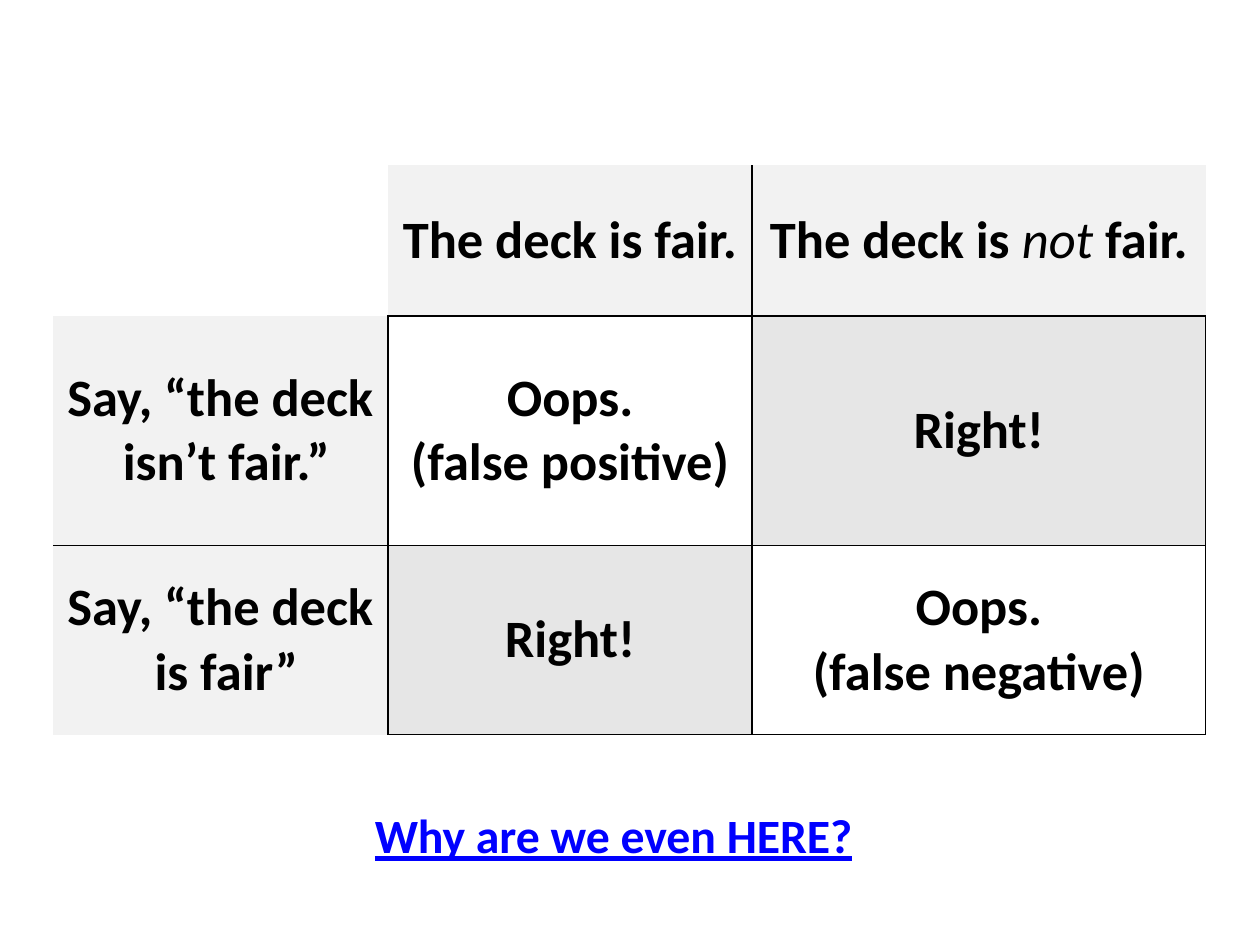
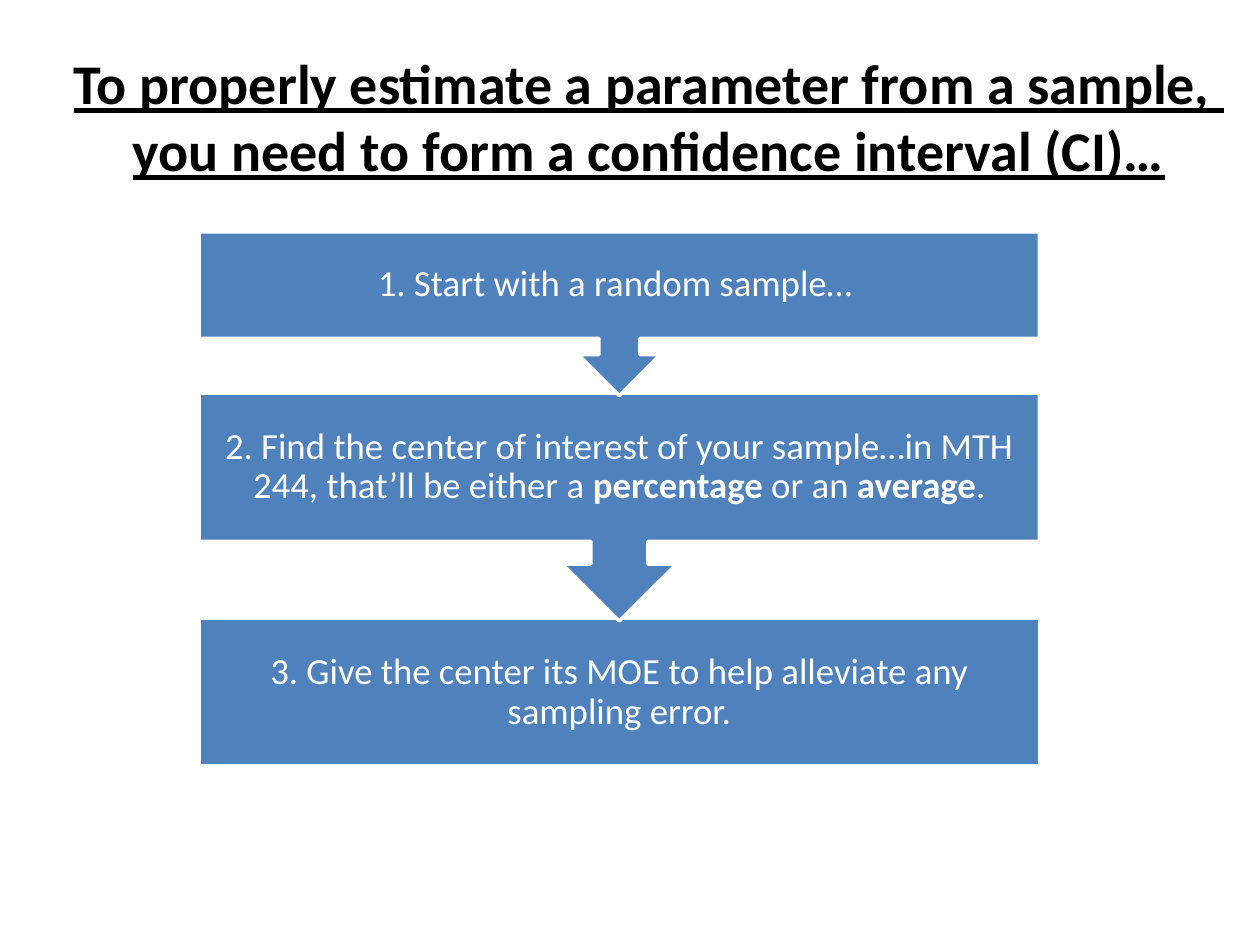
from pptx import Presentation
from pptx.dml.color import RGBColor
from pptx.enum.shapes import MSO_SHAPE as Shape
from pptx.enum.text import MSO_ANCHOR as Anchor, PP_ALIGN as Align
from pptx.oxml import parse_xml
from pptx.oxml.ns import nsdecls
from pptx.util import Inches, Pt

BLACK = RGBColor(0x00, 0x00, 0x00)
WHITE = RGBColor(0xFF, 0xFF, 0xFF)
LINK_BLUE = RGBColor(0x00, 0x00, 0xFF)
STEP_BLUE = RGBColor(0x4F, 0x81, 0xBD)
HEADER_GREY = RGBColor(0xF2, 0xF2, 0xF2)
RIGHT_GREY = RGBColor(0xE6, 0xE6, 0xE6)
FONT = "Calibri"
NO_STYLE = "{2D5ABB26-0587-4C30-8999-92F81FD0307C}"

COLUMNS = (2.66, 2.89, 0.13, 3.42)
ROWS = (0.31, 1.2, 1.82, 1.5)
OUTCOMES = {
    (1, 1): (["The deck is fair."], HEADER_GREY, "RB"),
    (1, 2): ([["The deck is ", ("not", {"bold": False, "italic": True}), " fair."]],
             HEADER_GREY, "LB"),
    (2, 0): (["Say, “the deck", " isn’t fair.”"], HEADER_GREY, "RB"),
    (2, 1): (["Oops.", "(false positive)"], None, "LRTB"),
    (2, 2): (["Right!"], RIGHT_GREY, "LRTB"),
    (3, 0): (["Say, “the deck", " is fair”"], HEADER_GREY, "RT"),
    (3, 1): (["Right!"], RIGHT_GREY, "LRTB"),
    (3, 2): (["Oops.", "(false negative)"], None, "LRTB"),
}

STRONG = {"bold": True}
STEPS = (
    (1.3, ["1. Start with a random sample… "]),
    (1.81, ["2. Find the center of interest of your sample…in MTH 244, that’ll be either a ",
            ("percentage", STRONG), " or an ", ("average", STRONG), "."]),
    (1.17, ["3. Give the center its MOE to help alleviate any sampling error."]),
)
STEP_OVERLAP = 0.02
CALLOUT_BODY = 0.65


def write(frame, lines, size, color, bold=False, underline=False, spacing=None):
    for index, line in enumerate(lines):
        para = frame.paragraphs[0] if index == 0 else frame.add_paragraph()
        para.alignment = Align.CENTER
        if spacing:
            para.line_spacing = spacing
        for part in [line] if isinstance(line, str) else line:
            text, emphasis = (part, {}) if isinstance(part, str) else part
            span = para.add_run()
            span.text = text
            font = span.font
            font.name, font.size, font.color.rgb = FONT, Pt(size), color
            font.bold = emphasis.get("bold", bold)
            font.italic = emphasis.get("italic", False)
            font.underline = underline


def add_text(page, left, top, width, height, lines, inset=None, wrap=True, **style):
    frame = page.shapes.add_textbox(
        Inches(left), Inches(top), Inches(width), Inches(height)).text_frame
    frame.word_wrap = wrap
    frame.vertical_anchor = Anchor.MIDDLE
    if inset is not None:
        frame.margin_left = frame.margin_right = Inches(inset)
        frame.margin_top = frame.margin_bottom = Inches(inset)
    write(frame, lines, **style)


def format_cell(cell, fill=None, sides=""):
    cell.margin_left = cell.margin_right = Inches(0.07)
    cell.margin_top = cell.margin_bottom = 0
    cell.vertical_anchor = Anchor.MIDDLE
    properties = cell._tc.get_or_add_tcPr()
    for side in "LRTB":
        if side in sides:
            paint = f'<a:solidFill><a:srgbClr val="{str(BLACK)}"/></a:solidFill>'
        else:
            paint = "<a:noFill/>"
        properties.append(parse_xml(
            f'<a:ln{side} {nsdecls("a")} w="{int(Pt(1))}">{paint}</a:ln{side}>'))
    if fill is None:
        cell.fill.background()
    else:
        cell.fill.solid()
        cell.fill.fore_color.rgb = fill


def add_outcome_table(page, left, top):
    frame = page.shapes.add_table(
        len(ROWS), len(COLUMNS), Inches(left), Inches(top),
        Inches(sum(COLUMNS)), Inches(sum(ROWS)))
    table = frame.table
    table.first_row = table.horz_banding = False
    table._tbl.tblPr.find("{*}tableStyleId").text = NO_STYLE
    for column, width in zip(table.columns, COLUMNS):
        column.width = Inches(width)
    for row, height in zip(table.rows, ROWS):
        row.height = Inches(height)
    last = len(COLUMNS) - 1
    for row in range(len(ROWS)):
        for column in range(len(COLUMNS)):
            cell = table.cell(row, column)
            source = (row, 2 if column == last else column)
            lines, fill, sides = OUTCOMES.get(source, ([], None, ""))
            if column == last:
                sides = sides.replace("L", "")
            format_cell(cell, fill, sides)
            if column != last:
                write(cell.text_frame, lines, size=30, color=BLACK, bold=True)
    table.cell(0, 0).merge(table.cell(0, 2))
    for row in range(1, len(ROWS)):
        table.cell(row, 2).merge(table.cell(row, last))


def add_step(page, left, top, width, height, line, is_last):
    kind = Shape.RECTANGLE if is_last else Shape.UP_ARROW_CALLOUT
    box = page.shapes.add_shape(
        kind, Inches(left), Inches(top), Inches(width), Inches(height))
    box.rotation = 0 if is_last else 180
    box.shadow.inherit = False
    box.fill.solid()
    box.fill.fore_color.rgb = STEP_BLUE
    box.line.color.rgb = WHITE
    box.line.width = Pt(2)
    body = height if is_last else height * CALLOUT_BODY
    add_text(page, left, top, width, body, [line], inset=0.16,
             size=21, color=WHITE, spacing=0.9)


def add_steps(page, left, top, width):
    placed = []
    for height, line in STEPS:
        placed.append((top, height, line))
        top += height - STEP_OVERLAP
    for index, (step_top, height, line) in reversed(list(enumerate(placed))):
        add_step(page, left, step_top, width, height, line, index == len(STEPS) - 1)


def build_outcome_slide(page):
    add_outcome_table(page, 0.42, 1)
    add_text(page, 0.37, 6, 9, 1.25, ["Why are we even HERE?"],
             size=27.3, color=LINK_BLUE, bold=True, underline=True)


def build_interval_slide(page):
    add_text(page, 0.3, 0.33, 9.7, 1.18,
             ["To properly estimate a parameter from a sample, ",
              "you need to form a confidence interval (CI)…"],
             wrap=False, size=32, color=BLACK, bold=True, underline=True)
    add_steps(page, 1.58, 1.84, 6.67)


def main():
    deck = Presentation()
    deck.slide_width, deck.slide_height = Inches(10), Inches(7.5)
    for build in (build_outcome_slide, build_interval_slide):
        build(deck.slides.add_slide(deck.slide_layouts[6]))
    deck.save("out.pptx")


if __name__ == "__main__":
    main()
